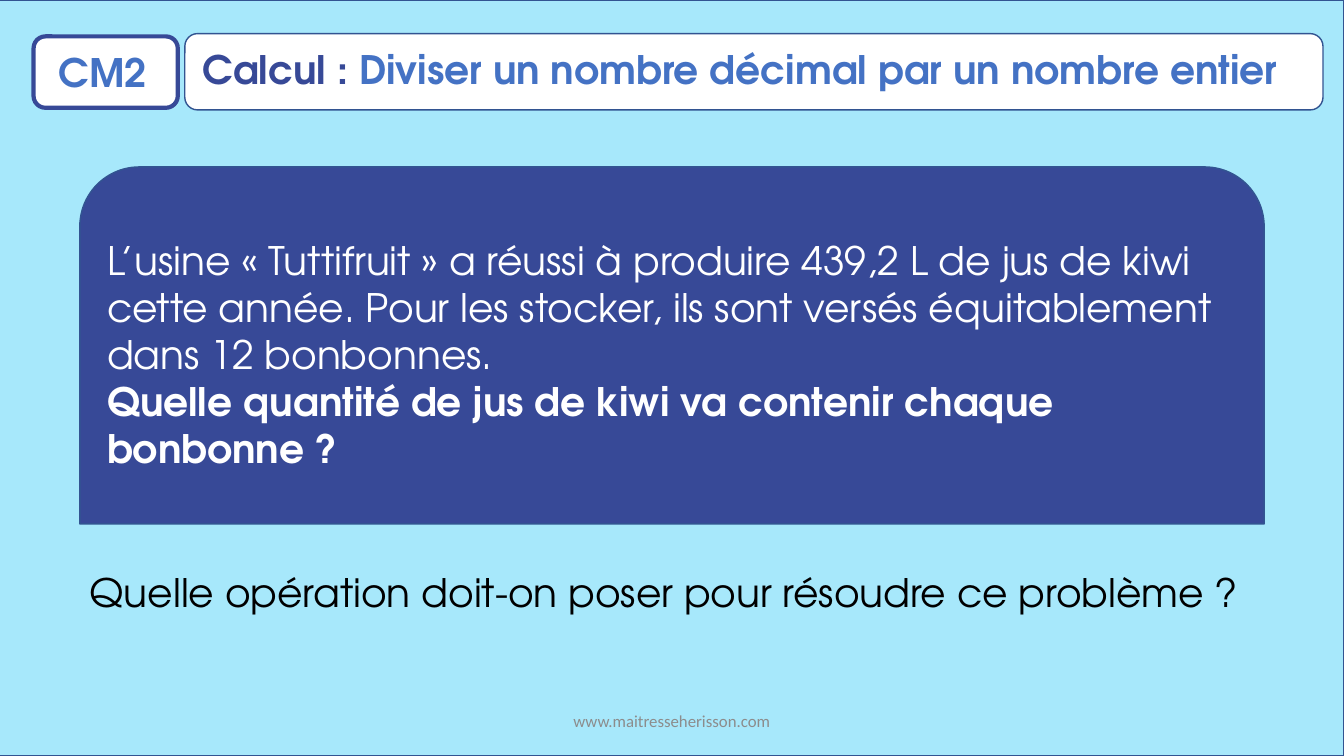
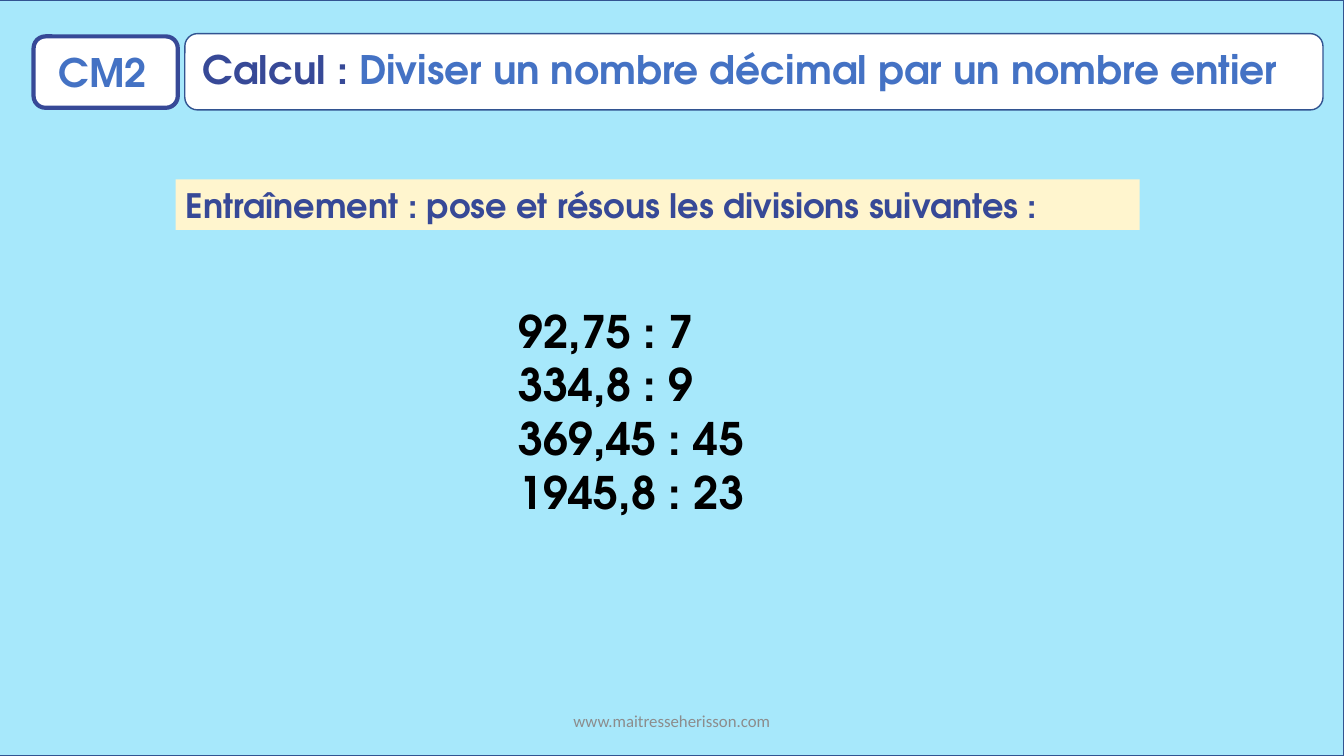
from lxml import etree
from pptx import Presentation
from pptx.dml.color import RGBColor
from pptx.enum.shapes import MSO_SHAPE
from pptx.enum.text import MSO_ANCHOR, MSO_AUTO_SIZE, PP_ALIGN
from pptx.oxml.ns import qn
from pptx.util import Pt

RECT = MSO_SHAPE.RECTANGLE
ROUNDED = MSO_SHAPE.ROUNDED_RECTANGLE
ROUNDED_TOP = MSO_SHAPE.ROUND_2_SAME_RECTANGLE
TOP, MIDDLE = MSO_ANCHOR.TOP, MSO_ANCHOR.MIDDLE
LEFT, CENTER = PP_ALIGN.LEFT, PP_ALIGN.CENTER
NO_AUTOFIT = MSO_AUTO_SIZE.NONE

SKY = RGBColor(0xA7, 0xE8, 0xFB)
NAVY = RGBColor(0x37, 0x49, 0x97)
BLUE = RGBColor(0x44, 0x72, 0xC4)
OUTLINE = RGBColor(0x32, 0x54, 0x91)
CREAM = RGBColor(0xFF, 0xF5, 0xCE)
GREY = RGBColor(0x8C, 0x8C, 0x8C)
WHITE = RGBColor(0xFF, 0xFF, 0xFF)
BLACK = RGBColor(0, 0, 0)

FONT = "TeX Gyre Adventor"
FOOTER_FONT = "Calibri"
WIDTH, HEIGHT = 960, 540

LEVEL = "CM2"
TITLE = [("Calcul : ", NAVY), ("Diviser un nombre décimal par un nombre entier", BLUE)]
FOOTER = "www.maitresseherisson.com"

PROBLEM = "L’usine « Tuttifruit » a réussi à produire 439,2 L de jus de kiwi cette année. Pour les stocker, ils sont versés équitablement dans 12 bonbonnes."
PROBLEM_QUESTION = "Quelle quantité de jus de kiwi va contenir chaque bonbonne ?"
OPERATION_QUESTION = "Quelle opération doit-on poser pour résoudre ce problème ?"

INSTRUCTION = "Entraînement : pose et résous les divisions suivantes :"
DIVISIONS = ["92,75 : 7", "334,8 : 9", "369,45 : 45", "1945,8 : 23"]


def place(sp, box):
    sp.left, sp.top, sp.width, sp.height = map(Pt, box)


def add_box(slide, kind, box, fill, line=None, weight=1):
    sp = slide.shapes.add_shape(kind, *map(Pt, box))
    sp.shadow.inherit = False
    sp.fill.solid()
    sp.fill.fore_color.rgb = fill
    if line is None:
        sp.line.fill.background()
    else:
        sp.line.color.rgb = line
        sp.line.width = Pt(weight)
    return sp


def style(p, size, color=None, bold=False, align=LEFT, font=FONT):
    p.alignment = align
    p.space_before = Pt(0)
    p.font.name, p.font.size, p.font.bold = font, Pt(size), bold
    if color is not None:
        p.font.color.rgb = color


def write(sp, lines, size, color, bold=False, anchor=TOP, align=LEFT, font=FONT):
    tf = sp.text_frame
    tf.word_wrap = True
    tf.auto_size = NO_AUTOFIT
    tf.vertical_anchor = anchor
    tf.text = "\n".join(lines)
    for p in tf.paragraphs:
        style(p, size, color, bold, align, font)
    return tf


def add_text(slide, box, text, size, color, **options):
    write(slide.shapes.add_textbox(*map(Pt, box)), [text], size, color, **options)


def write_body(slide, box, lines, size, bold=False):
    """Fill the body placeholder with unbulleted lines, in front of the frame."""
    body = slide.placeholders[1]
    place(body, box)
    slide.shapes._spTree.append(body._element)
    for p in write(body, lines, size, BLACK, bold).paragraphs:
        pPr = p._p.get_or_add_pPr()
        pPr.set("marL", "0")
        pPr.set("indent", "0")
        bullet = etree.Element(qn("a:buNone"))
        pPr.insert_element_before(bullet, "a:tabLst", "a:defRPr", "a:extLst")


def write_title(slide, box):
    title = slide.shapes.title
    place(title, box)
    slide.shapes._spTree.append(title._element)
    tf = title.text_frame
    tf.word_wrap = True
    tf.auto_size = NO_AUTOFIT
    tf.vertical_anchor = TOP
    p = tf.paragraphs[0]
    for text, color in TITLE:
        r = p.add_run()
        r.text = text
        r.font.color.rgb = color
    style(p, 28, bold=True)


def add_lesson_slide(prs):
    """Add a slide with the shared frame, level badge, title and footer."""
    slide = prs.slides.add_slide(prs.slide_layouts[1])
    add_box(slide, RECT, (-0.5, 0, WIDTH, HEIGHT), SKY, OUTLINE)
    add_box(slide, ROUNDED, (24, 26, 103, 51), WHITE, NAVY, 3)
    add_text(slide, (35, 31, 79, 41), LEVEL, 28, BLUE, bold=True)
    add_box(slide, ROUNDED, (132, 24, 813, 54.5), WHITE, OUTLINE)
    write_title(slide, (137.5, 29, 788, 41))
    add_text(slide, (318, 500.5, 324, 28.5), FOOTER, 12, GREY,
             anchor=MIDDLE, align=CENTER, font=FOOTER_FONT)
    return slide


def build_problem(prs):
    slide = add_lesson_slide(prs)
    card = add_box(slide, ROUNDED_TOP, (57, 119.25, 846, 255), NAVY, OUTLINE)
    tf = write(card, [PROBLEM, PROBLEM_QUESTION], 28, WHITE, anchor=MIDDLE)
    tf.paragraphs[1].font.bold = True
    write_body(slide, (57, 402.5, 868, 41), [OPERATION_QUESTION], 28)


def build_practice(prs):
    slide = add_lesson_slide(prs)
    band = add_box(slide, RECT, (125.5, 128.25, 688.5, 36), CREAM)
    write(band, [INSTRUCTION], 24, NAVY, bold=True)
    write_body(slide, (363, 213, 213, 163), DIVISIONS, 32, bold=True)


def main():
    prs = Presentation()
    prs.slide_width, prs.slide_height = Pt(WIDTH), Pt(HEIGHT)
    build_problem(prs)
    build_practice(prs)
    prs.save("out.pptx")


if __name__ == "__main__":
    main()
